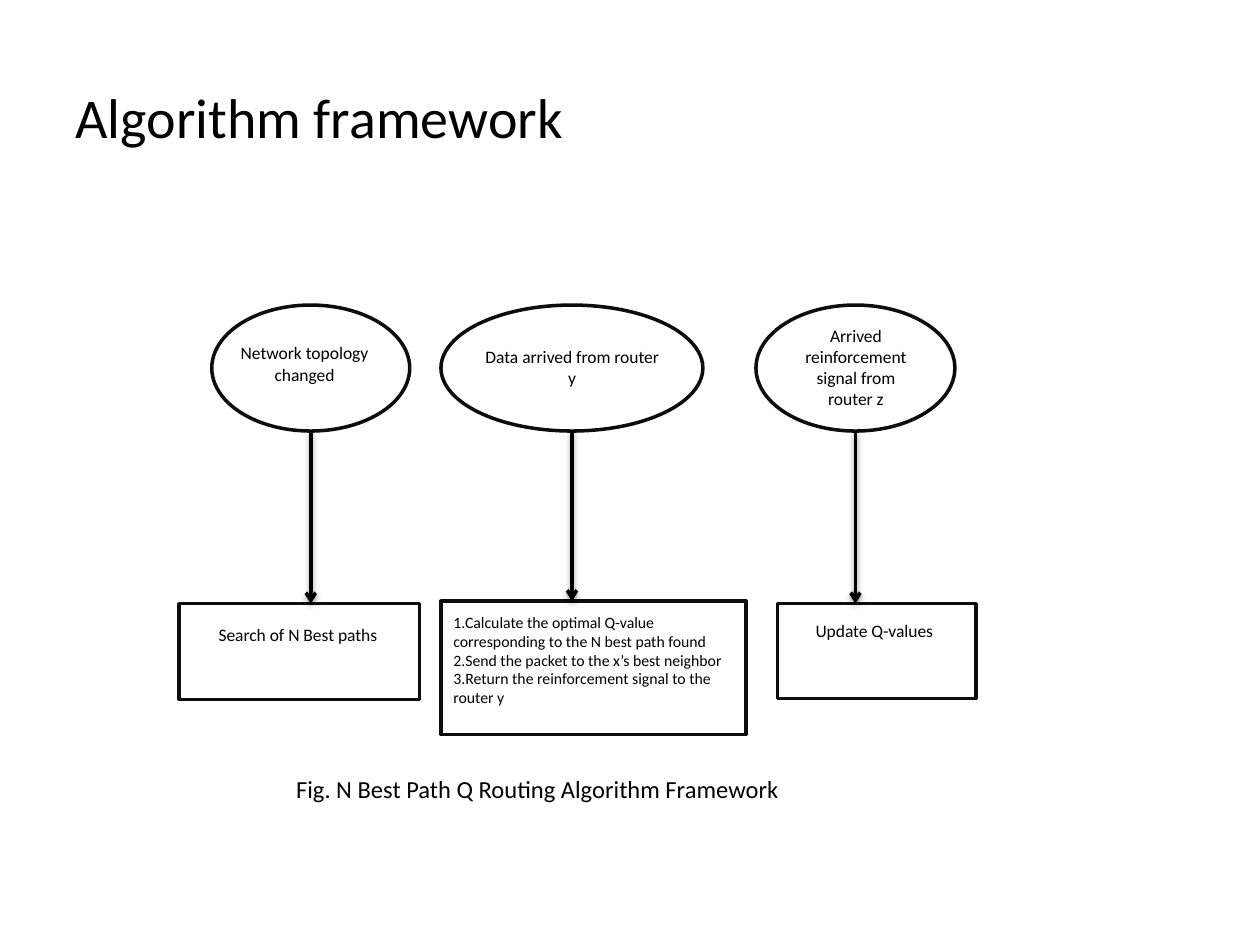
from collections import namedtuple

from lxml.etree import SubElement
from pptx import Presentation
from pptx.dml.color import RGBColor
from pptx.enum.shapes import MSO_CONNECTOR as Connector, MSO_SHAPE as Shape
from pptx.enum.text import MSO_ANCHOR as Anchor, PP_ALIGN as Align
from pptx.oxml.ns import qn
from pptx.util import Cm, Pt

BLACK = RGBColor(0x00, 0x00, 0x00)
OUTLINE = RGBColor(0x0D, 0x0D, 0x0D)
LINE_WIDTH = Pt(2)

# All lengths are in centimetres.
Box = namedtuple("Box", "left top width height")
# A node's label box is relative to the node's own box.
Node = namedtuple("Node", "box label_box lines size align", defaults=(10, Align.CENTER))

EVENT_TOP, EVENT_HEIGHT = 6.15, 2.54

# Each branch is an event and the outcome it leads to.
BRANCHES = [
    (
        Node(Box(4.27, EVENT_TOP, 3.99, EVENT_HEIGHT), Box(0.18, 0.63, 3.38, 1.12),
             ["Network topology changed"]),
        Node(Box(3.61, 12.17, 4.85, 1.93), Box(0.07, 0.28, 4.65, 0.69),
             ["Search of N Best paths"]),
    ),
    (
        Node(Box(8.89, EVENT_TOP, 5.28, EVENT_HEIGHT), Box(0.64, 0.71, 4.01, 1.12),
             ["Data arrived from router y"]),
        Node(Box(8.89, 12.12, 6.15, 2.69), Box(0, 0.1, 6.15, 2.18),
             ["1.Calculate the optimal Q-value corresponding to the N best path found",
              "2.Send the packet to the x’s best neighbor",
              "3.Return the reinforcement signal to the router y"],
             9, Align.LEFT),
    ),
    (
        Node(Box(15.24, EVENT_TOP, 4.01, EVENT_HEIGHT), Box(0.53, 0.28, 2.97, 1.96),
             ["Arrived reinforcement signal from router z"]),
        Node(Box(15.67, 12.17, 4.01, 1.91), Box(0, 0.2, 3.91, 0.69),
             ["Update Q-values"]),
    ),
]


def lengths(box):
    return [Cm(value) for value in box]


def add_text(page, box, lines, size, align=Align.LEFT, anchor=Anchor.TOP):
    frame = page.shapes.add_textbox(*lengths(box)).text_frame
    frame.word_wrap = True
    frame.vertical_anchor = anchor
    font_format = {"name": "Calibri", "size": Pt(size)}
    for index, line in enumerate(lines):
        para = frame.add_paragraph() if index else frame.paragraphs[0]
        para.alignment = align
        span = para.add_run()
        span.text = line
        for name, value in font_format.items():
            setattr(span.font, name, value)
        span.font.color.rgb = BLACK


def add_node(page, kind, node):
    shape = page.shapes.add_shape(kind, *lengths(node.box))
    shape.shadow.inherit = False
    shape.fill.background()
    shape.line.color.rgb = OUTLINE
    shape.line.width = LINE_WIDTH
    label = node.label_box._replace(left=node.box.left + node.label_box.left,
                                    top=node.box.top + node.label_box.top)
    add_text(page, label, node.lines, node.size, node.align)


def add_arrow(page, event, outcome):
    """Drop a shadowed arrow from the event's bottom centre to the outcome's top."""
    middle = Cm(event.left + event.width / 2)
    arrow = page.shapes.add_connector(Connector.STRAIGHT, middle,
                                      Cm(event.top + event.height),
                                      middle, Cm(outcome.top))
    arrow.line.color.rgb = BLACK
    arrow.line.width = LINE_WIDTH
    SubElement(arrow.line._get_or_add_ln(), qn("a:tailEnd"), type="arrow")
    effects = SubElement(arrow._element.spPr, qn("a:effectLst"))
    shadow = SubElement(effects, qn("a:outerShdw"), blurRad="40000", dist="20000",
                        dir="5400000", rotWithShape="0")
    color = SubElement(shadow, qn("a:srgbClr"), val=str(BLACK))
    SubElement(color, qn("a:alpha"), val="38000")


def add_branch(page, event, outcome):
    add_node(page, Shape.OVAL, event)
    add_node(page, Shape.RECTANGLE, outcome)
    add_arrow(page, event.box, outcome.box)


def main():
    deck = Presentation()
    deck.slide_width, deck.slide_height = Cm(25.4), Cm(19.05)
    page = deck.slides.add_slide(deck.slide_layouts[6])
    add_text(page, Box(1.27, 0.76, 22.86, 3.18), ["Algorithm framework"], 32,
             anchor=Anchor.MIDDLE)
    for event, outcome in BRANCHES:
        add_branch(page, event, outcome)
    add_text(page, Box(5.72, 15.47, 14.45, 0.86),
             ["Fig. N Best Path Q Routing Algorithm Framework"], 14)
    deck.save("out.pptx")


if __name__ == "__main__":
    main()
